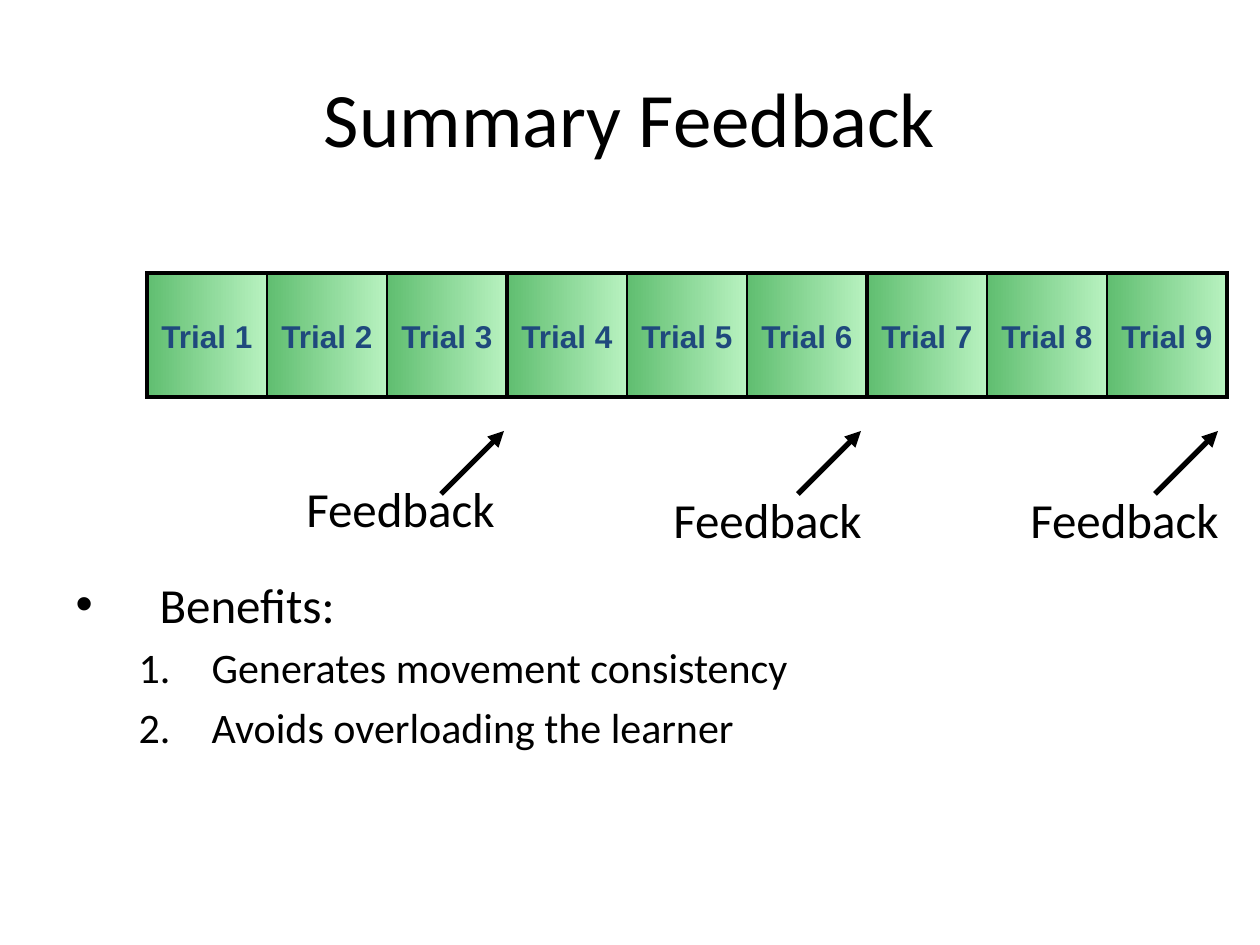
from lxml import etree
from pptx import Presentation
from pptx import util as u
from pptx.dml.color import RGBColor
from pptx.enum import shapes, text
from pptx.oxml.ns import qn

COLORS = {"ink": "000000", "trial": "1F497D", "dark": "60BE70", "light": "B8F2C0"}
TRIALS, GROUP = 9, 3


def px(length):
    """Turn slide pixels (126 to the inch) into EMU."""
    return u.Emu(round(length * 914400 / 126))


def style(span, **values):
    """Set font attributes; color is a key of COLORS."""
    span.font.color.rgb = RGBColor.from_string(COLORS[values.pop("color")])
    for name, value in values.items():
        setattr(span.font, name, value)


deck = Presentation()
deck.slide_width, deck.slide_height = px(1260), px(945)
page = deck.slides.add_slide(deck.slide_layouts[1])
title, body = page.placeholders

# Title
title.left, title.top, title.width, title.height = px(63), px(38), px(1134), px(158)
title.text_frame.text = "Summary Feedback"
style(title.text_frame.paragraphs[0].runs[0], color="ink", name="Calibri", size=u.Pt(44))

# Benefits list
body.left, body.top, body.width, body.height = px(63), px(568), px(1134), px(276)
benefits = [
    ("Benefits:", dict(level=0, space_before=u.Pt(0)), 28, 84, -84),
    ("Generates movement consistency", dict(level=1, space_before=u.Pt(5)), 24, 136, -73),
    ("Avoids overloading the learner", dict(level=1, space_before=u.Pt(5)), 24, 136, -73),
]
for index, (words, layout, size, margin, indent) in enumerate(benefits):
    frame = body.text_frame
    para = frame.add_paragraph() if index else frame.paragraphs[0]
    for name, value in layout.items():
        setattr(para, name, value)
    span = para.add_run()
    span.text = words
    style(span, color="ink", name="Calibri", size=u.Pt(size))
    properties = para._p.get_or_add_pPr()
    properties.set("marL", str(px(margin)))
    properties.set("indent", str(px(indent)))
    if para.level:
        etree.SubElement(properties, qn("a:buFont"), typeface="+mj-lt")
        etree.SubElement(properties, qn("a:buAutoNum"), type="arabicPeriod")

# Row of trials, with thick borders around each group
table = page.shapes.add_table(1, TRIALS, px(147), px(273), px(120 * TRIALS), px(124)).table
table.first_row = table.horz_banding = False
for column, cell in enumerate(table.rows[0].cells):
    table.columns[column].width = px(120)
    cell.vertical_anchor = text.MSO_ANCHOR.MIDDLE
    cell.margin_left = cell.margin_right = px(6)
    cell.margin_top, cell.margin_bottom = px(12), px(6)
    para = cell.text_frame.paragraphs[0]
    para.alignment = text.PP_ALIGN.CENTER
    span = para.add_run()
    span.text = f"Trial {column + 1}"
    style(span, color="trial", name="Arial", size=u.Pt(18), bold=True)

    place = column % GROUP
    borders = {
        "lnL": 2.25 if column == 0 else 3 if place == 0 else 1,
        "lnR": 3 if place == GROUP - 1 else 1,
        "lnT": 2.25,
        "lnB": 2.25,
    }
    for side, weight in borders.items():
        line = etree.SubElement(cell._tc.get_or_add_tcPr(), qn(f"a:{side}"), w=str(u.Pt(weight)))
        fill = etree.SubElement(line, qn("a:solidFill"))
        etree.SubElement(fill, qn("a:srgbClr"), val=COLORS["ink"])
    cell.fill.gradient()
    cell.fill.gradient_angle = 0
    for stop, color in zip(cell.fill.gradient_stops, ("dark", "light")):
        stop.color.rgb = RGBColor.from_string(COLORS[color])

# Feedback after each group: arrow start, label left and label top
for start, left, top in [(441, 294, 472), (798, 661, 483), (1155, 1018, 483)]:
    arrow = page.shapes.add_connector(
        shapes.MSO_CONNECTOR.STRAIGHT, px(start), px(494), px(start + 63), px(431))
    arrow.line.width = u.Pt(3)
    arrow.line.color.rgb = RGBColor.from_string(COLORS["ink"])
    etree.SubElement(arrow.line._get_or_add_ln(), qn("a:tailEnd"), type="triangle")
    etree.SubElement(arrow._element.spPr, qn("a:effectLst"))

    label = page.shapes.add_textbox(px(left), px(top), px(252), px(72))
    label.text_frame.word_wrap = True
    span = label.text_frame.paragraphs[0].add_run()
    span.text = "Feedback"
    style(span, color="ink", name="Calibri", size=u.Pt(28))

deck.save("out.pptx")
